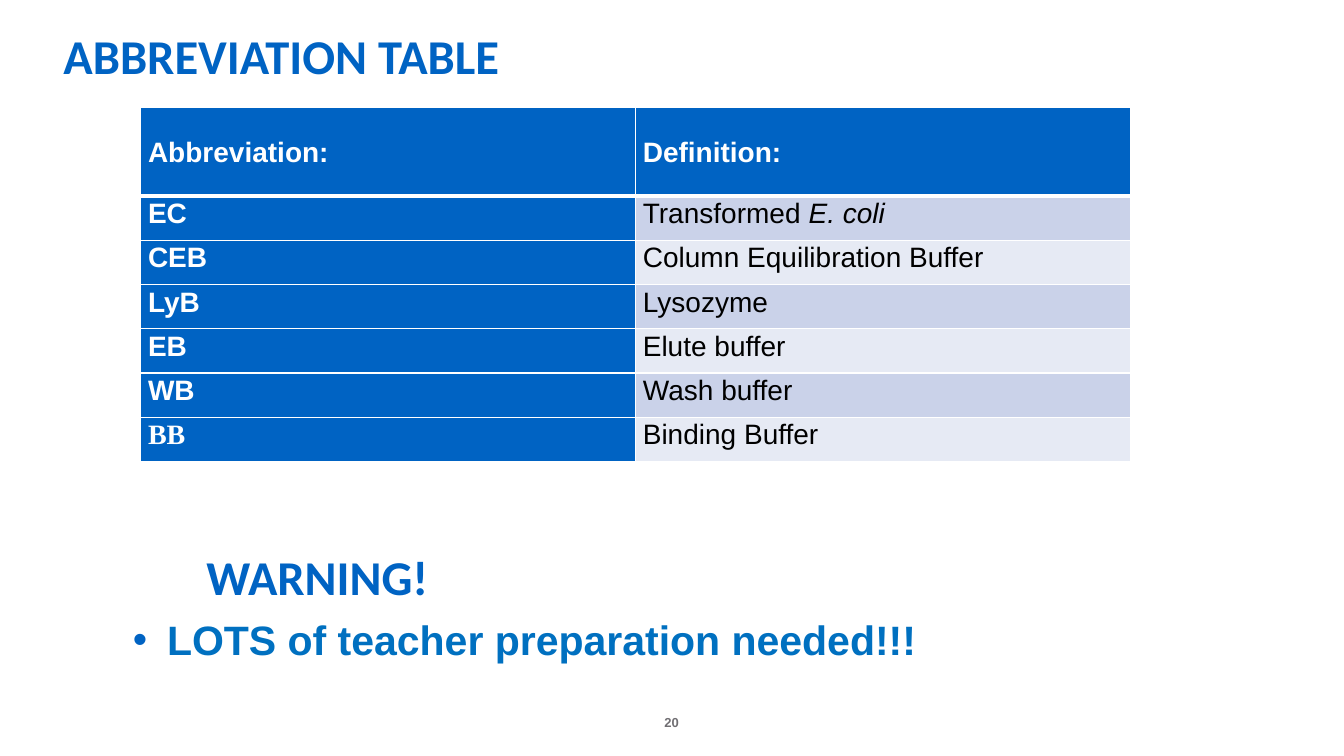
from lxml.etree import SubElement
from pptx import Presentation
from pptx.dml.color import RGBColor
from pptx.enum.text import MSO_ANCHOR as Anchor, PP_ALIGN as Align
from pptx.oxml.ns import qn
from pptx.util import Cm, Pt

COLORS = {
    "blue": "0063C3", "bright": "0070C0", "band": "CAD2E9", "pale": "E6EAF4",
    "white": "FFFFFF", "black": "000000", "gray": "716F73",
}
HEADINGS = ("Abbreviation:", "Definition:")
ABBREVIATIONS = [
    ("EC", ("Transformed ", "E. coli")),
    ("CEB", ("Column Equilibration Buffer",)),
    ("LyB", ("Lysozyme",)),
    ("EB", ("Elute buffer",)),
    ("WB", ("Wash buffer",)),
    ("BB", ("Binding Buffer",)),
]


def rgb(name):
    return RGBColor.from_string(COLORS[name])


def style(run, size, color, font="Arial", bold=True):
    run.font.name = font
    run.font.size = Pt(size)
    run.font.bold = bold
    run.font.color.rgb = rgb(color)


def add_line(slide, box, text, size, color, font="Arial", anchor=Anchor.BOTTOM):
    """Place a one-paragraph text box and return its paragraph."""
    frame = slide.shapes.add_textbox(*map(Cm, box)).text_frame
    frame.word_wrap = True
    frame.vertical_anchor = anchor
    frame.text = text
    paragraph = frame.paragraphs[0]
    style(paragraph.runs[0], size, color, font)
    return paragraph


def add_heading(slide, box, text):
    add_line(slide, box, text, 34.7, "blue", "Calibri")


def add_bullet_line(slide, box, text):
    paragraph = add_line(slide, box, text, 29.3, "bright", anchor=Anchor.TOP)
    props = paragraph._p.get_or_add_pPr()
    props.set("marL", str(Cm(0.86)))
    props.set("indent", str(-Cm(0.86)))
    bullet_color = SubElement(props, qn("a:buClr"))
    SubElement(bullet_color, qn("a:srgbClr"), val=COLORS["blue"])
    SubElement(props, qn("a:buFont"), typeface="Arial")
    SubElement(props, qn("a:buChar"), char="•")


def add_page_number(slide, box, number):
    paragraph = add_line(slide, box, number, 9.3, "gray")
    paragraph.alignment = Align.CENTER
    slide.shapes[-1].text_frame.margin_bottom = 0


def set_borders(cell, top, bottom):
    """Draw white cell borders; top and bottom are widths in points."""
    props = cell._tc.get_or_add_tcPr()
    sides = (("a:lnL", 1), ("a:lnR", 1), ("a:lnT", top), ("a:lnB", bottom))
    for position, (side, width) in enumerate(sides):
        line = SubElement(props, qn(side), w=str(Pt(width)))
        fill = SubElement(line, qn("a:solidFill"))
        SubElement(fill, qn("a:srgbClr"), val=COLORS["white"])
        props.insert(position, line)


def fill_cell(cell, parts, fill, color, bold, font="Arial"):
    """Write the parts as runs, every part after the first in italics."""
    cell.margin_left = cell.margin_right = Cm(0.18)
    cell.margin_top = cell.margin_bottom = 0
    paragraph = cell.text_frame.paragraphs[0]
    paragraph.line_spacing = 1.07
    for index, part in enumerate(parts):
        run = paragraph.add_run()
        run.text = part
        style(run, 20, color, font, bold)
        run.font.italic = index > 0
    cell.fill.solid()
    cell.fill.fore_color.rgb = rgb(fill)


def add_abbreviation_table(slide, box):
    left, top, width, height = box
    row_count = len(ABBREVIATIONS) + 1
    table = slide.shapes.add_table(row_count, 2, *map(Cm, box)).table
    for column in table.columns:
        column.width = Cm(width / 2)
    # The header is as tall as two body rows.
    for index, row in enumerate(table.rows):
        row.height = Cm(height / (row_count + 1) * (2 if index == 0 else 1))

    for column, heading in enumerate(HEADINGS):
        cell = table.cell(0, column)
        fill_cell(cell, (heading,), "blue", "white", True)
        cell.vertical_anchor = Anchor.MIDDLE
        set_borders(cell, 1, 3)
    for row, (short, definition) in enumerate(ABBREVIATIONS, 1):
        font = "Times New Roman" if short == "BB" else "Arial"
        fill_cell(table.cell(row, 0), (short,), "blue", "white", True, font)
        band = "band" if row % 2 else "pale"
        fill_cell(table.cell(row, 1), definition, band, "black", False)
        for column in range(2):
            set_borders(table.cell(row, column), 3 if row == 1 else 1, 1)


def main():
    deck = Presentation()
    deck.slide_width, deck.slide_height = Cm(33.87), Cm(19.05)
    slide = deck.slides.add_slide(deck.slide_layouts[6])
    add_page_number(slide, (15.39, 17.37, 3.07, 1.02), "20")
    add_abbreviation_table(slide, (3.55, 2.71, 24.94, 8.92))
    add_heading(slide, (1.35, 0.51, 31.17, 1.73), "ABBREVIATION TABLE")
    add_heading(slide, (4.95, 11.15, 18.92, 4.22), "WARNING!")
    add_bullet_line(slide, (3.1, 15.37, 22.66, 2.64),
                    "LOTS of teacher preparation needed!!!")
    deck.save("out.pptx")


if __name__ == "__main__":
    main()
